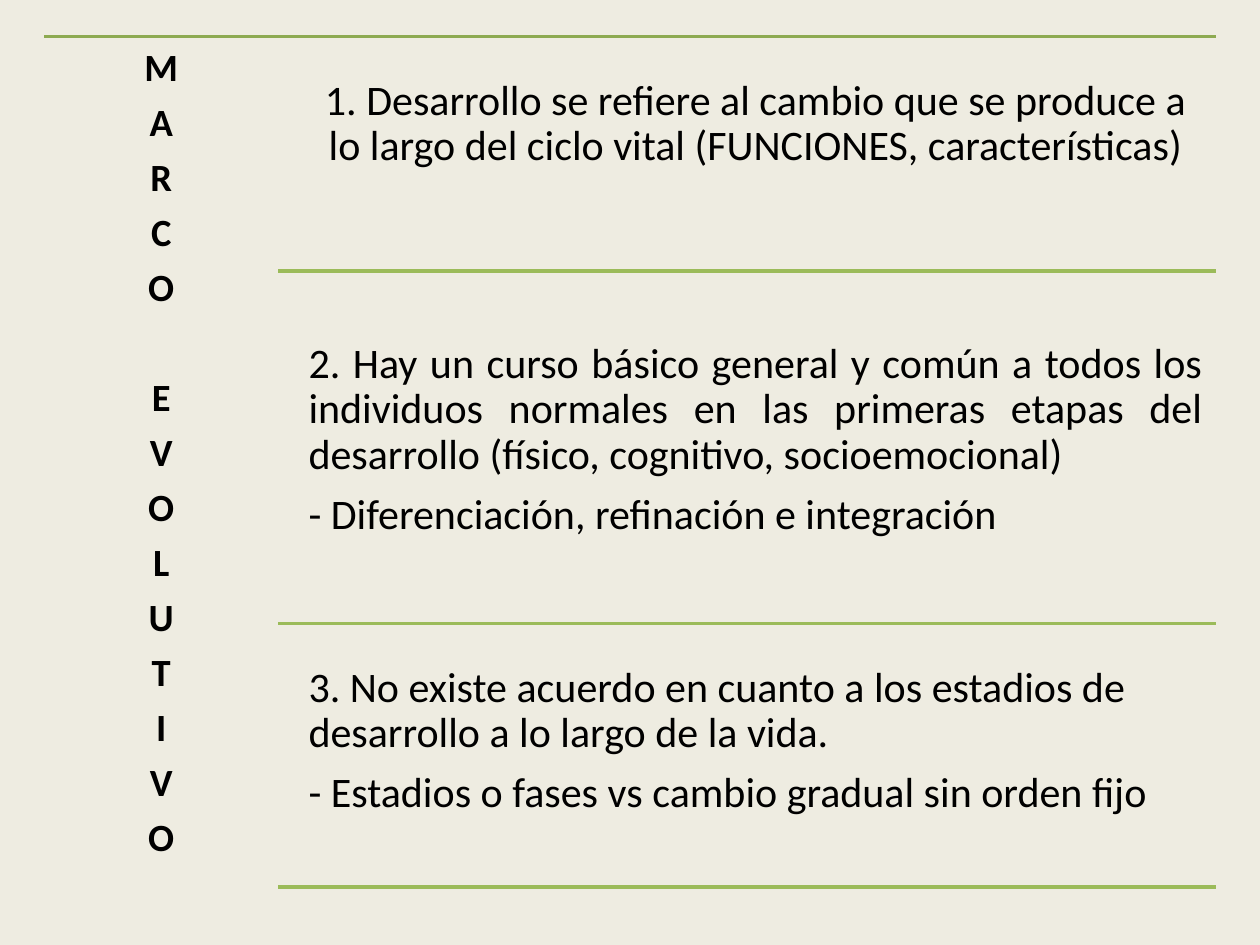
from pptx import Presentation
from pptx.dml.color import RGBColor
from pptx.enum.shapes import MSO_CONNECTOR
from pptx.enum.text import MSO_ANCHOR, MSO_AUTO_SIZE, PP_ALIGN
from pptx.oxml.ns import qn
from pptx.util import Cm, Pt
from lxml.etree import SubElement

LEFT, RIGHT, TOP = 0.89, 24.51, 0.74
RULE_LEFT = 5.61
TEXT_LEFT, TEXT_WIDTH = 5.97, 18.52
SPACING = 0.35
WORD_GAP = 39

SECTIONS = [
    (1.35, 4.11, 5.46, PP_ALIGN.CENTER, [
        "1. Desarrollo se refiere al cambio que se produce a lo largo del ciclo vital "
        "(FUNCIONES, características)"]),
    (6.65, 6.5, 12.57, PP_ALIGN.JUSTIFY, [
        "2. Hay un curso básico general y común a todos los individuos normales en las "
        "primeras etapas del desarrollo (físico, cognitivo, socioemocional)",
        "- Diferenciación, refinación e integración"]),
    (13.18, 4.7, 17.88, PP_ALIGN.LEFT, [
        "3. No existe acuerdo en cuanto a los estadios de desarrollo a lo largo de la vida.",
        "- Estadios o fases vs cambio gradual sin orden fijo"]),
]


def color(value):
    """Return the colour for a hex string."""
    return RGBColor.from_string(value)


def prepare_frame(frame, inset):
    """Set wrapping, top anchoring and equal margins."""
    frame.word_wrap = True
    frame.auto_size = MSO_AUTO_SIZE.NONE
    frame.vertical_anchor = MSO_ANCHOR.TOP
    for side in ("left", "right", "top", "bottom"):
        setattr(frame, f"margin_{side}", Cm(inset))


def write_paragraph(frame, index, text, size=24, bold=False, align=PP_ALIGN.LEFT, after=None):
    """Write one formatted paragraph, using the first one if it is free."""
    para = frame.add_paragraph() if index else frame.paragraphs[0]
    para.alignment = align
    para.line_spacing = 0.9
    para.space_before = Pt(0)
    para.space_after = Pt(after or size * SPACING)
    span = para.add_run()
    span.text = text
    span.font.name = "Calibri"
    span.font.size = Pt(size)
    span.font.bold = bold
    span.font.color.rgb = color("000000")


def add_rule(page, left, top, tint="9BBB59"):
    """Draw a horizontal rule to the right edge."""
    rule = page.shapes.add_connector(
        MSO_CONNECTOR.STRAIGHT, Cm(left), Cm(top), Cm(RIGHT), Cm(top))
    rule.line.color.rgb = color(tint)
    rule.line.width = Pt(2)
    SubElement(rule._element.spPr, qn("a:effectLst"))


def write_title(page, words):
    """Stack the letters of the title, with a gap between words."""
    title = page.shapes.title
    title.left, title.top = Cm(LEFT), Cm(TOP)
    title.width, title.height = Cm(4.72), Cm(17.78)
    prepare_frame(title.text_frame, 0.23)
    letters = [(letter, position == len(word) - 1)
               for word in words for position, letter in enumerate(word)]
    for index, (letter, ends_word) in enumerate(letters):
        after = WORD_GAP if ends_word and index < len(letters) - 1 else None
        write_paragraph(title.text_frame, index, letter, size=22, bold=True,
                        align=PP_ALIGN.CENTER, after=after)


def add_section(page, top, height, align, texts):
    """Add the text of one section."""
    box = page.shapes.add_textbox(Cm(TEXT_LEFT), Cm(top), Cm(TEXT_WIDTH), Cm(height))
    prepare_frame(box.text_frame, 0.25)
    for index, text in enumerate(texts):
        write_paragraph(box.text_frame, index, text, align=align)


def main():
    """Build and save the slide."""
    deck = Presentation()
    deck.slide_width, deck.slide_height = Cm(25.4), Cm(19.05)
    page = deck.slides.add_slide(deck.slide_layouts.get_by_name("Title Only"))
    page.background.fill.solid()
    page.background.fill.fore_color.rgb = color("EEECE1")
    write_title(page, ["MARCO", "EVOLUTIVO"])
    add_rule(page, LEFT, TOP, tint="8DAA51")
    for top, height, rule_top, align, texts in SECTIONS:
        add_section(page, top, height, align, texts)
        add_rule(page, RULE_LEFT, rule_top)
    deck.save("out.pptx")


if __name__ == "__main__":
    main()
